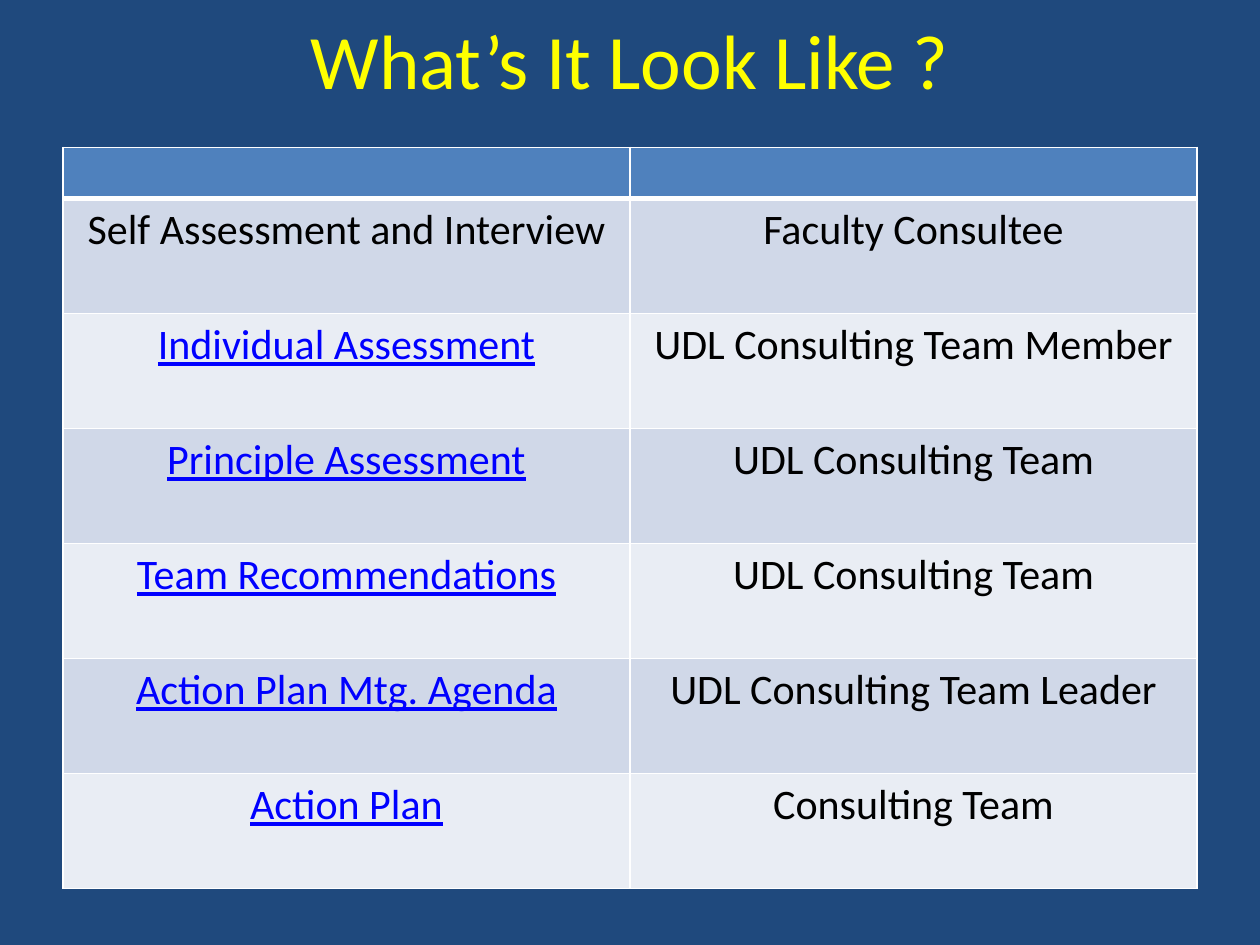
from lxml.etree import SubElement
from pptx import Presentation
from pptx.dml.color import RGBColor
from pptx.enum.text import MSO_ANCHOR, PP_ALIGN
from pptx.oxml.ns import qn
from pptx.util import Pt

HEADER_HEIGHT, ROW_HEIGHT = 29.2, 65.75
ROWS = [
    ("Self Assessment and Interview", "Faculty Consultee"),
    ("Individual Assessment", "UDL Consulting Team Member"),
    ("Principle Assessment", "UDL Consulting Team"),
    ("Team Recommendations", "UDL Consulting Team"),
    ("Action Plan Mtg. Agenda", "UDL Consulting Team Leader"),
    ("Action Plan", "Consulting Team"),
]


def rgb(color):
    return RGBColor.from_string(color)


def write(tf, text, size=24, color="000000", underline=False, font="Calibri"):
    p = tf.paragraphs[0]
    p.alignment = PP_ALIGN.CENTER
    r = p.add_run()
    r.text = text
    r.font.name = font
    r.font.size = Pt(size)
    r.font.color.rgb = rgb(color)
    r.font.underline = underline


def add_borders(cell, color, bottom):
    """Draw 1 pt borders, with their own width below; call before filling."""
    tcPr = cell._tc.get_or_add_tcPr()
    for side, width in (("L", 1), ("R", 1), ("T", 1), ("B", bottom)):
        ln = SubElement(tcPr, qn(f"a:ln{side}"), w=str(Pt(width)))
        fill = SubElement(ln, qn("a:solidFill"))
        SubElement(fill, qn("a:srgbClr"), val=color)


class SlideBuilder:
    background = "1F497D"
    title_color = "FFFF00"
    link_color = "0000FF"
    text_color = "000000"
    border_color = "FFFFFF"
    header_fill = "4F81BD"
    band_fills = ("D0D8E8", "E9EDF4")

    def __init__(self, prs):
        self.s = prs.slides.add_slide(prs.slide_layouts[5])
        fill = self.s.background.fill
        fill.solid()
        fill.fore_color.rgb = rgb(self.background)

    def title(self, text, left, top, width, height):
        sp = self.s.shapes.title
        sp.left, sp.top, sp.width, sp.height = map(Pt, (left, top, width, height))
        sp.text_frame.vertical_anchor = MSO_ANCHOR.MIDDLE
        write(sp.text_frame, text, size=44, color=self.title_color)

    def cell(self, cell, fill, bottom=1):
        add_borders(cell, self.border_color, bottom)
        cell.fill.solid()
        cell.fill.fore_color.rgb = rgb(fill)

    def table(self, rows, left, top, width):
        height = HEADER_HEIGHT + len(rows) * ROW_HEIGHT
        table = self.s.shapes.add_table(
            len(rows) + 1, 2, Pt(left), Pt(top), Pt(width), Pt(height)).table
        table.rows[0].height = Pt(HEADER_HEIGHT)
        for cell in table.rows[0].cells:
            self.cell(cell, self.header_fill, bottom=3)
        for i, texts in enumerate(rows):
            row = table.rows[i + 1]
            row.height = Pt(ROW_HEIGHT)
            for j, (cell, text) in enumerate(zip(row.cells, texts)):
                self.cell(cell, self.band_fills[i % 2])
                linked = i > 0 and j == 0
                write(cell.text_frame, text, underline=linked,
                      color=self.link_color if linked else self.text_color)


def main():
    prs = Presentation()
    prs.slide_width, prs.slide_height = Pt(720), Pt(540)
    slide = SlideBuilder(prs)
    slide.title("What’s It Look Like ?", 36, -11.5, 648, 90)
    slide.table(ROWS, 36, 84.25, 648)
    prs.save("out.pptx")


if __name__ == "__main__":
    main()
